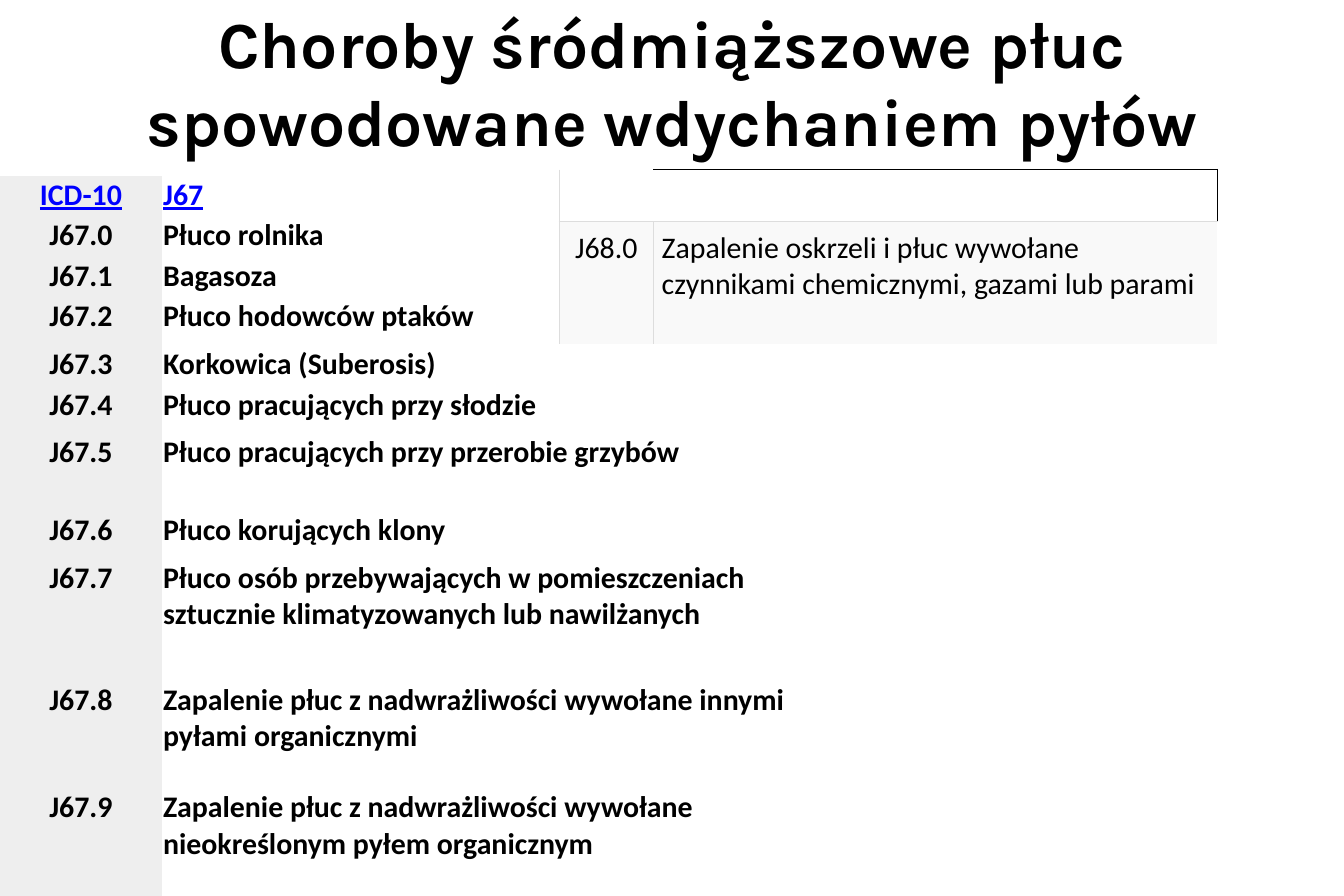
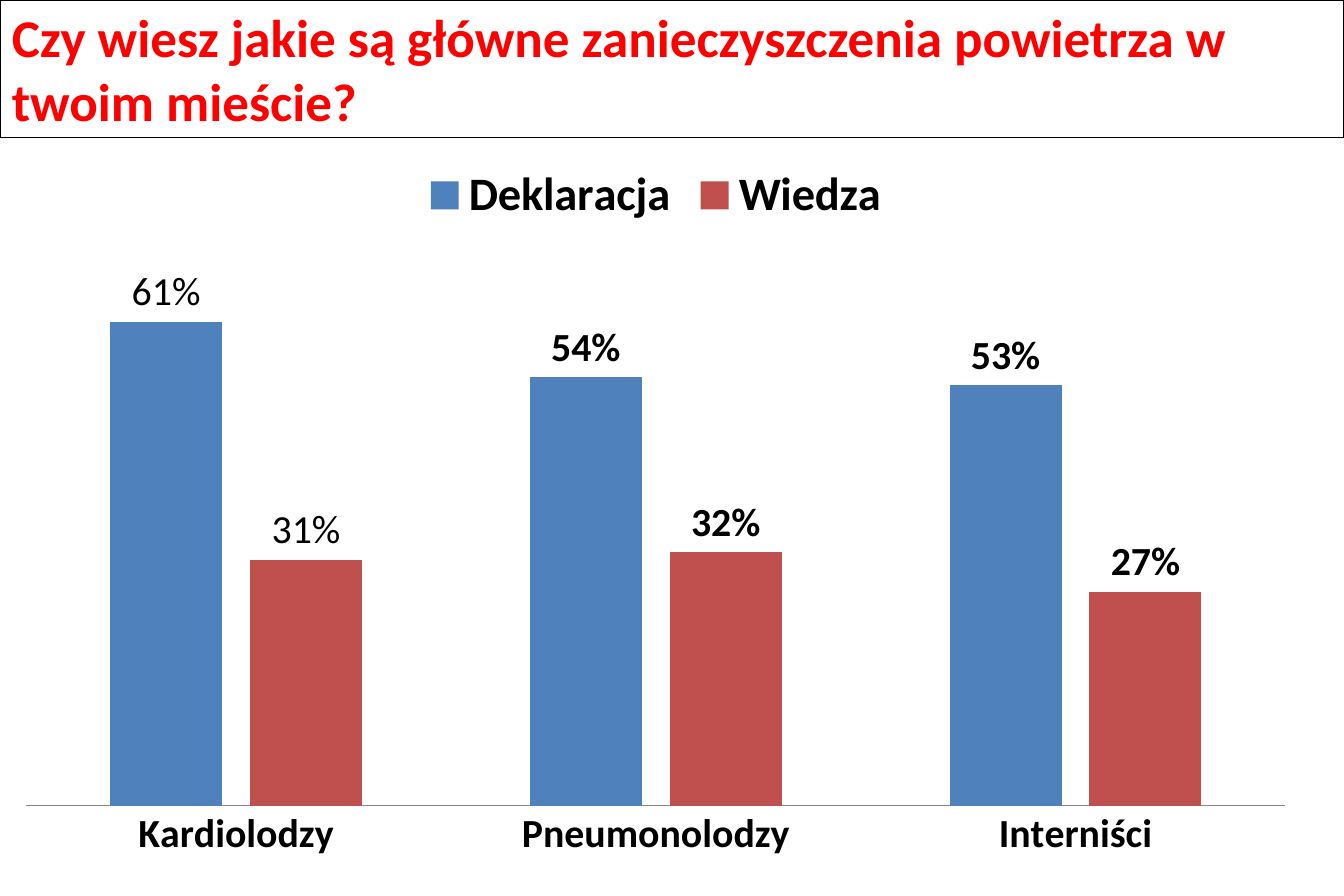
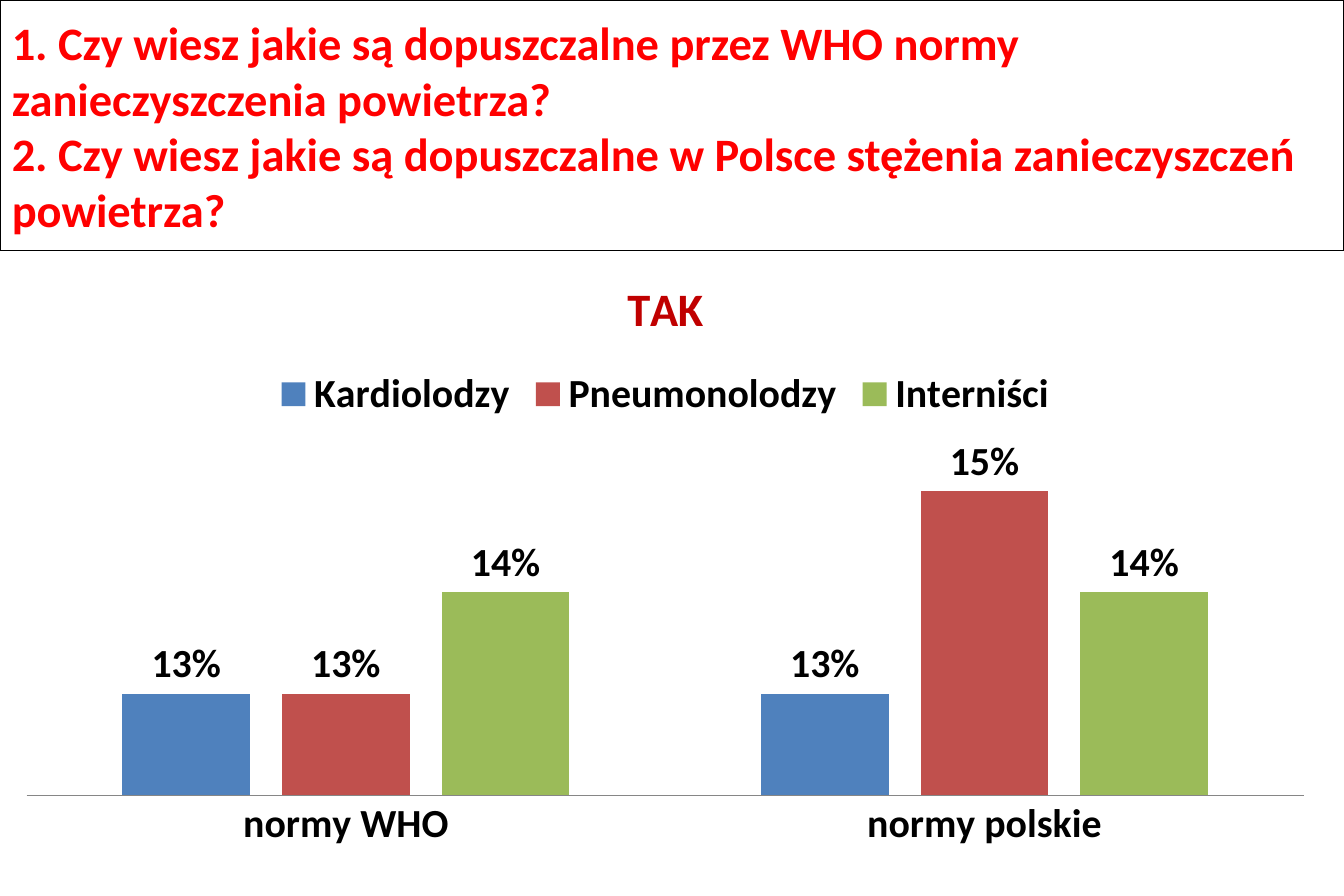
from lxml import etree
from pptx import Presentation
from pptx.chart.data import CategoryChartData
from pptx.dml.color import RGBColor
from pptx.enum.chart import XL_CHART_TYPE, XL_LABEL_POSITION, XL_LEGEND_POSITION, XL_TICK_MARK
from pptx.enum.shapes import MSO_SHAPE
from pptx.enum.text import MSO_ANCHOR, PP_ALIGN
from pptx.oxml import parse_xml
from pptx.oxml.ns import nsdecls, qn
from pptx.util import Inches, Pt

COLUMNS = XL_CHART_TYPE.COLUMN_CLUSTERED
OUTSIDE = XL_LABEL_POSITION.OUTSIDE_END
LEGEND_TOP = XL_LEGEND_POSITION.TOP
NO_TICK = XL_TICK_MARK.NONE
RECTANGLE = MSO_SHAPE.RECTANGLE
MIDDLE = MSO_ANCHOR.MIDDLE
LEFT, CENTER = PP_ALIGN.LEFT, PP_ALIGN.CENTER

BLACK = RGBColor(0x00, 0x00, 0x00)
WHITE = RGBColor(0xFF, 0xFF, 0xFF)
RED = RGBColor(0xFF, 0x00, 0x00)
DARK_RED = RGBColor(0xC0, 0x00, 0x00)
LINK_BLUE = RGBColor(0x00, 0x00, 0xFF)
CODE_GREY = RGBColor(0xEE, 0xEE, 0xEE)
PALE_GREY = RGBColor(0xF9, 0xF9, 0xF9)
BORDER_GREY = RGBColor(0xDD, 0xDD, 0xDD)
AXIS_GREY = RGBColor(0x86, 0x86, 0x86)
SERIES_COLORS = (
    RGBColor(0x4F, 0x81, 0xBD),
    RGBColor(0xC0, 0x50, 0x4D),
    RGBColor(0x9B, 0xBB, 0x59),
)

SLIDE_WIDTH, SLIDE_HEIGHT = Inches(11.25), Inches(7.5)
PLAIN_TABLE = "{2D5ABB26-0587-4C30-8999-92F81FD0307C}"

BODY = {"name": "Calibri", "size": Pt(18), "bold": False, "color": BLACK}
STRONG = {**BODY, "bold": True}
LINK = {**STRONG, "color": LINK_BLUE, "underline": True}
TITLE = {**STRONG, "name": "Karla", "size": Pt(39.6)}
CHART_LABEL = {**STRONG, "size": Pt(24)}
CHART_TITLE = {**STRONG, "size": Pt(28), "color": DARK_RED}

DISEASES = (
    ("ICD-10", "J67", 4.53),
    ("J67.0", "Płuco rolnika", 4.53),
    ("J67.1", "Bagasoza", 4.53),
    ("J67.2", "Płuco hodowców ptaków", 5.33),
    ("J67.3", "Korkowica (Suberosis)", 4.53),
    ("J67.4", "Płuco pracujących przy słodzie", 5.33),
    ("J67.5", "Płuco pracujących przy przerobie grzybów", 8.67),
    ("J67.6", "Płuco korujących klony", 5.33),
    ("J67.7", "Płuco osób przebywających w pomieszczeniach sztucznie klimatyzowanych lub nawilżanych", 13.6),
    ("J67.8", "Zapalenie płuc z nadwrażliwości wywołane innymi pyłami organicznymi", 12),
    ("J67.9", "Zapalenie płuc z nadwrażliwości wywołane nieokreślonym pyłem organicznym", 12),
)


def across(percent):
    return round(SLIDE_WIDTH * percent / 100)


def down(percent):
    return round(SLIDE_HEIGHT * percent / 100)


def place(left, top, width, height):
    return across(left), down(top), across(width), down(height)


def assign(target, values):
    for name, value in values.items():
        if name == "color":
            target.color.rgb = value
        else:
            setattr(target, name, value)


class SlideMaker:
    def __init__(self):
        self.deck = Presentation()
        self.deck.slide_width = SLIDE_WIDTH
        self.deck.slide_height = SLIDE_HEIGHT
        self.page = None

    def new_page(self):
        self.page = self.deck.slides.add_slide(self.deck.slide_layouts[6])

    def put_text(self, frame, lines, style, align=LEFT):
        frame.word_wrap = True
        for number, line in enumerate(lines):
            para = frame.add_paragraph() if number else frame.paragraphs[0]
            para.alignment = align
            span = para.add_run()
            span.text = line
            assign(span.font, style)

    def title(self, text, area):
        box = self.page.shapes.add_textbox(*place(*area))
        box.text_frame.vertical_anchor = MIDDLE
        self.put_text(box.text_frame, [text], TITLE, CENTER)

    def question(self, lines, height, size):
        box = self.page.shapes.add_shape(RECTANGLE, *place(0, 0, 100, height))
        box.shadow.inherit = False
        box.fill.background()
        assign(box.line, {"color": BLACK, "width": Pt(0.75)})
        box.text_frame.vertical_anchor = MIDDLE
        self.put_text(box.text_frame, lines, {**STRONG, "size": Pt(size), "color": RED})

    def table(self, left, top, widths, heights):
        area = place(left, top, sum(widths), sum(heights))
        grid = self.page.shapes.add_table(len(heights), len(widths), *area).table
        assign(grid, {"first_row": False, "horz_banding": False})
        grid._tbl.tblPr.find(qn("a:tableStyleId")).text = PLAIN_TABLE
        for column, width in zip(grid.columns, widths):
            column.width = across(width)
        for row, height in zip(grid.rows, heights):
            row.height = down(height)
        return grid

    def cell(self, cell, text, style, margin, align=LEFT, fill=None, borders=None):
        for side in ("left", "right", "top", "bottom"):
            setattr(cell, f"margin_{side}", Inches(margin))
        borders = borders or {}
        for side in "LRTB":
            if side in borders:
                self.border(cell, side, *borders[side])
        if fill is None:
            cell.fill.background()
        else:
            cell.fill.solid()
            cell.fill.fore_color.rgb = fill
        if text:
            self.put_text(cell.text_frame, [text], style, align)

    def border(self, cell, side, color, points):
        line = parse_xml(f'<a:ln{side} {nsdecls("a")} w="{Pt(points)}"/>')
        paint = etree.SubElement(line, qn("a:solidFill"))
        etree.SubElement(paint, qn("a:srgbClr")).set("val", str(color))
        cell._tc.get_or_add_tcPr().append(line)

    def chart(self, area, categories, series, plot_area, scale, legend_size, title=None, light_point=None):
        data = CategoryChartData(number_format="0%")
        data.categories = categories
        for name, values in series:
            data.add_series(name, values)
        chart = self.page.shapes.add_chart(COLUMNS, *place(*area), data).chart
        assign(chart.font, BODY)
        chart.has_title = title is not None
        if title:
            self.put_text(chart.chart_title.text_frame, [title], CHART_TITLE, CENTER)
            chart.chart_title.include_in_layout = False
        chart.has_legend = True
        assign(chart.legend, {"position": LEGEND_TOP, "include_in_layout": False})
        assign(chart.legend.font, {**STRONG, "size": Pt(legend_size)})
        self.axes(chart, scale)
        plot = chart.plots[0]
        assign(plot, {"gap_width": 150, "overlap": -25, "vary_by_categories": False})
        for bars, color in zip(plot.series, SERIES_COLORS):
            self.bars(bars, color, light_point)
        self.plot_layout(chart, plot_area)

    def axes(self, chart, scale):
        low, high = scale
        assign(chart.value_axis, {
            "minimum_scale": low, "maximum_scale": high,
            "has_major_gridlines": False, "visible": False,
        })
        axis = chart.category_axis
        assign(axis, {"major_tick_mark": NO_TICK, "minor_tick_mark": NO_TICK})
        assign(axis.tick_labels.font, CHART_LABEL)
        assign(axis.format.line, {"color": AXIS_GREY, "width": Pt(0.75)})

    def bars(self, bars, color, light_point):
        bars.format.fill.solid()
        bars.format.fill.fore_color.rgb = color
        labels = bars.data_labels
        assign(labels, {
            "show_value": True, "position": OUTSIDE,
            "number_format": "0%", "number_format_is_linked": False,
        })
        assign(labels.font, CHART_LABEL)
        if light_point is not None:
            label = bars.points[light_point].data_label
            assign(label.font, {**CHART_LABEL, "bold": False})
            label.position = OUTSIDE

    def plot_layout(self, chart, shares):
        plot_area = chart._chartSpace.chart.plotArea
        for old in plot_area.findall(qn("c:layout")):
            plot_area.remove(old)
        layout = parse_xml(f'<c:layout {nsdecls("c")}/>')
        manual = etree.SubElement(layout, qn("c:manualLayout"))
        settings = [("layoutTarget", "inner"), ("xMode", "edge"), ("yMode", "edge")]
        for name, value in settings + list(zip("xywh", shares)):
            etree.SubElement(manual, qn(f"c:{name}")).set("val", str(value))
        plot_area.insert(0, layout)


def disease_page(maker):
    maker.new_page()
    maker.title("Choroby śródmiąższowe płuc spowodowane wdychaniem pyłów", (0, -0.4, 100, 18.93))

    heights = [height for code, name, height in DISEASES]
    grid = maker.table(0, 19.6, (12.05, 49.15), heights)
    for number, (code, name, height) in enumerate(DISEASES):
        style = STRONG if number else LINK
        maker.cell(grid.cell(number, 0), code, style, 0.01, CENTER, CODE_GREY)
        maker.cell(grid.cell(number, 1), name, style, 0.01)

    grey, black = (BORDER_GREY, 0.6), (BLACK, 1)
    grid = maker.table(41.6, 18.93, (7.02, 41.96), (5.8, 13.7))
    maker.cell(grid.cell(0, 0), "", BODY, 0.05, fill=WHITE, borders={"L": grey, "B": grey})
    maker.cell(grid.cell(0, 1), "", BODY, 0.05, fill=WHITE, borders={"R": black, "T": black, "B": grey})
    maker.cell(grid.cell(1, 0), "J68.0", BODY, 0.07, CENTER, PALE_GREY, {"L": grey, "R": grey, "T": grey})
    maker.cell(
        grid.cell(1, 1), "Zapalenie oskrzeli i płuc wywołane czynnikami chemicznymi, gazami lub parami",
        BODY, 0.07, fill=PALE_GREY, borders={"L": grey, "T": grey},
    )


def pollution_page(maker):
    maker.new_page()
    maker.question(["Czy wiesz jakie są główne zanieczyszczenia powietrza w twoim mieście?"], 15.33, 32)
    maker.chart(
        (0, 16.67, 97.6, 80.53),
        ("Kardiolodzy", "Pneumonolodzy", "Interniści"),
        (("Deklaracja", (0.61, 0.54, 0.53)), ("Wiedza", (0.31, 0.32, 0.27))),
        (0.02, 0.14, 0.96, 0.77), (0, 0.7), 28, light_point=0,
    )


def norms_page(maker):
    maker.new_page()
    maker.question([
        "1. Czy wiesz jakie są dopuszczalne przez WHO normy zanieczyszczenia powietrza?",
        "2. Czy wiesz jakie są dopuszczalne w Polsce stężenia zanieczyszczeń powietrza?",
    ], 28, 28)
    maker.chart(
        (0, 28, 99, 68.27),
        ("normy WHO", "normy polskie"),
        (("Kardiolodzy", (0.13, 0.13)), ("Pneumonolodzy", (0.13, 0.15)), ("Interniści", (0.14, 0.14))),
        (0.02, 0.31, 0.96, 0.58), (0.12, 0.155), 24, title="TAK",
    )


def main():
    maker = SlideMaker()
    disease_page(maker)
    pollution_page(maker)
    norms_page(maker)
    maker.deck.save("out.pptx")


if __name__ == "__main__":
    main()
